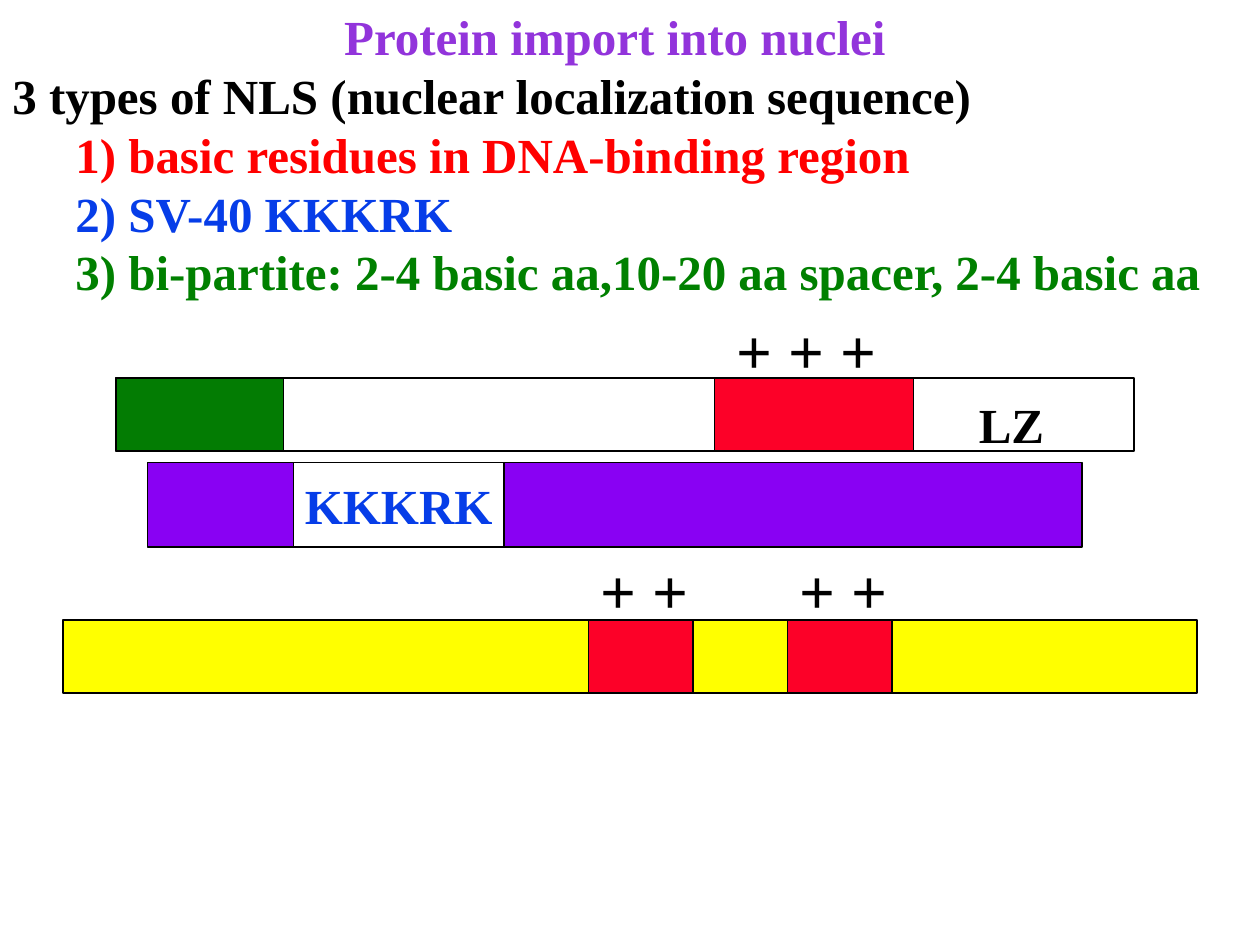
import dataclasses

import pptx
import pptx.dml.color
import pptx.enum.shapes
import pptx.enum.text
import pptx.util

Inches = pptx.util.Inches
Align = pptx.enum.text.PP_ALIGN
Anchor = pptx.enum.text.MSO_ANCHOR
Fit = pptx.enum.text.MSO_AUTO_SIZE


@dataclasses.dataclass(frozen=True)
class Theme:
    """Colours, font and type sizes of the slide."""

    font: str = "Times New Roman"
    body: int = 28
    sign: int = 36
    black: str = "000000"
    white: str = "FFFFFF"
    title: str = "9234DB"
    red: str = "FF0000"
    blue: str = "063DE8"
    green: str = "008000"
    purple: str = "8901F3"
    basic: str = "FC0128"
    domain: str = "037C03"
    yellow: str = "FFFF00"


class Board:
    """Draw styled elements on the current slide."""

    def __init__(self, slide, theme):
        self.slide = slide
        self.theme = theme

    def put(self, para, text, color, size=None):
        run = para.add_run()
        run.text = text
        font = run.font
        font.name = self.theme.font
        font.size = pptx.util.Pt(size or self.theme.body)
        font.bold = True
        font.color.rgb = pptx.dml.color.RGBColor.from_string(color)

    def title(self, text, left, top, width, height):
        shape = self.slide.shapes.title
        shape.left, shape.top = Inches(left), Inches(top)
        shape.width, shape.height = Inches(width), Inches(height)
        frame = shape.text_frame
        frame.auto_size = Fit.NONE
        frame.vertical_anchor = Anchor.TOP
        para = frame.paragraphs[0]
        para.alignment = Align.CENTER
        self.put(para, text, self.theme.title)

    def text(self, lines, left, top, width, height, size=None):
        box = self.slide.shapes.add_textbox(
            Inches(left), Inches(top), Inches(width), Inches(height))
        frame = box.text_frame
        frame.word_wrap = True
        frame.auto_size = Fit.SHAPE_TO_FIT_TEXT
        for num, (text, color, level) in enumerate(lines):
            para = frame.add_paragraph() if num else frame.paragraphs[0]
            para.level = level
            self.put(para, text, color, size)

    def signs(self, text, left, top, width):
        line = (text, self.theme.black, 0)
        self.text([line], left, top, width, 0.7, self.theme.sign)

    def bar(self, color, left, top, width, height, label=None):
        shape = self.slide.shapes.add_shape(
            pptx.enum.shapes.MSO_SHAPE.RECTANGLE,
            Inches(left), Inches(top), Inches(width), Inches(height))
        shape.shadow.inherit = False
        shape.fill.solid()
        shape.fill.fore_color.rgb = pptx.dml.color.RGBColor.from_string(color)
        shape.line.color.rgb = pptx.dml.color.RGBColor.from_string(self.theme.black)
        shape.line.width = pptx.util.Pt(1)
        if label:
            frame = shape.text_frame
            frame.word_wrap = False
            frame.vertical_anchor = Anchor.MIDDLE
            para = frame.paragraphs[0]
            para.alignment = Align.CENTER
            self.put(para, label, self.theme.blue)


def main():
    deck = pptx.Presentation()
    deck.slide_width, deck.slide_height = Inches(10), Inches(7.5)
    look = Theme()
    board = Board(deck.slides.add_slide(deck.slide_layouts[5]), look)

    board.title("Protein import into nuclei", 0, 0, 9.76, 0.57)
    board.text([
        ("3 types of NLS (nuclear localization sequence)", look.black, 0),
        ("1) basic residues in DNA-binding region", look.red, 1),
        ("2) SV-40 KKKRK", look.blue, 1),
        ("3) bi-partite: 2-4 basic aa,10-20 aa spacer, 2-4 basic aa", look.green, 1),
    ], 0, 0.47, 9.76, 1.96)

    board.bar(look.purple, 1.17, 3.67, 7.42, 0.67)
    board.bar(look.white, 2.33, 3.67, 1.67, 0.67, "KKKRK")

    thin = 0.58
    for color, left, width in (
        (look.white, 0.92, 8.08),
        (look.basic, 5.67, 1.58),
        (look.domain, 0.92, 1.33),
    ):
        board.bar(color, left, 3, width, thin)
    board.signs("+ + +", 5.75, 2.42, 1.33)
    board.text([("LZ", look.black, 0)], 7.67, 3.08, 1, 0.57)

    board.bar(look.yellow, 0.5, 4.92, 9, thin)
    for left in (6.25, 4.67):
        board.bar(look.basic, left, 4.92, 0.83, thin)
        board.signs("+ +", left, 4.33, 1)

    deck.save("out.pptx")


if __name__ == "__main__":
    main()
